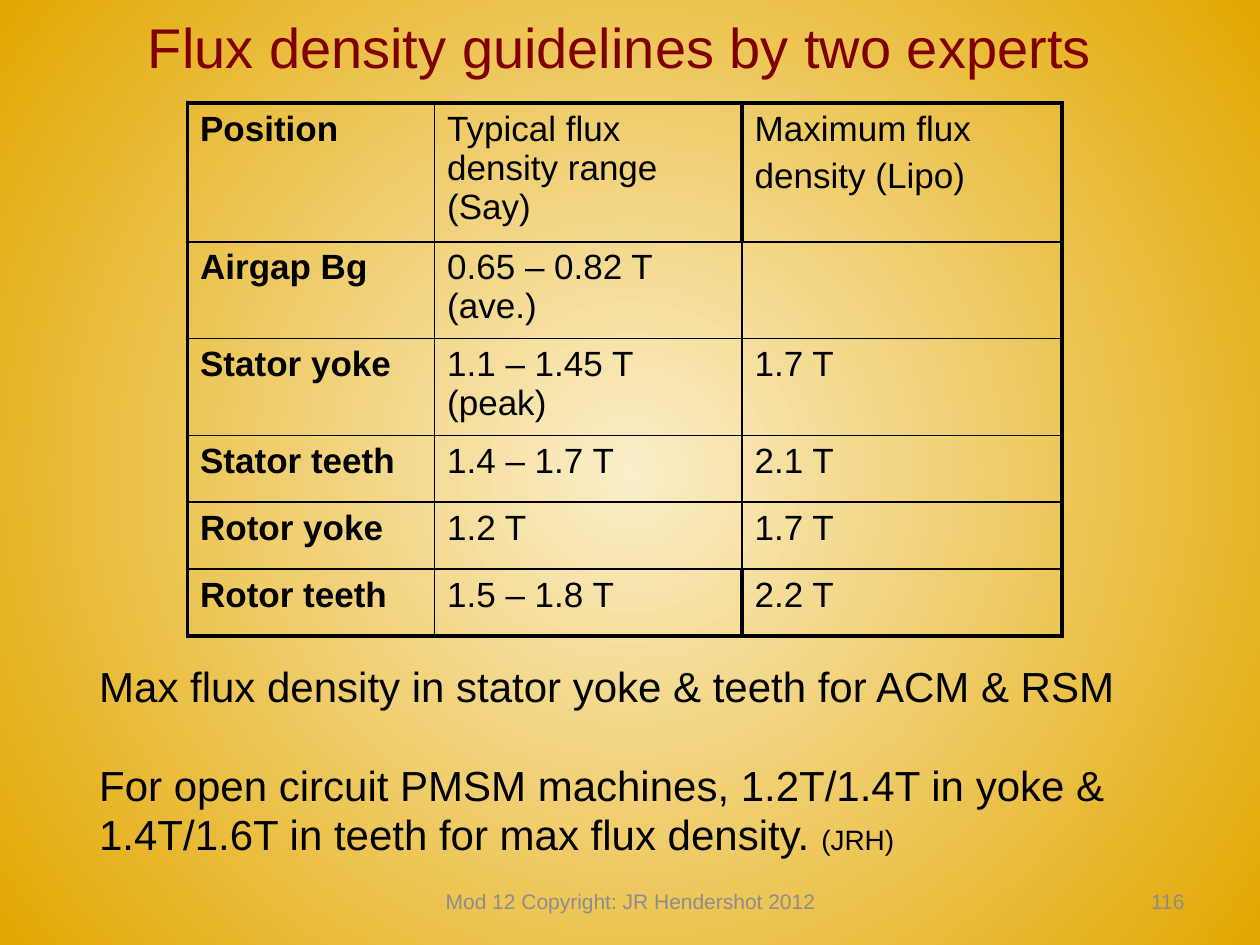
import pptx
import pptx.util
import pptx.oxml
import pptx.oxml.ns
import pptx.dml.color
import pptx.enum.text
from lxml import etree

Cm, Pt = pptx.util.Cm, pptx.util.Pt
ALIGN = pptx.enum.text.PP_ALIGN
ANCHOR = pptx.enum.text.MSO_ANCHOR
qn = pptx.oxml.ns.qn


def style(font, size, color="000000", bold=False):
    font.name, font.size, font.bold = "Arial", Pt(size), bold
    font.color.rgb = pptx.dml.color.RGBColor.from_string(color)


def label(text, left, top, width, height, size, color, align, anchor):
    box = slide.shapes.add_textbox(Cm(left), Cm(top), Cm(width), Cm(height))
    frame = box.text_frame
    frame.word_wrap = True
    frame.vertical_anchor = anchor
    para = frame.paragraphs[0]
    para.text = text
    para.alignment = align
    style(para.font, size, color)
    return frame


deck = pptx.Presentation()
deck.slide_width, deck.slide_height = Cm(25.4), Cm(19.05)
slide = deck.slides.add_slide(deck.slide_layouts[6])

# Background: pale centre, gold edge
fill = slide.background.fill
fill.gradient()
for stop, color, place in zip(fill.gradient_stops, ("FBEEC9", "E2A700"), (0, 1)):
    stop.color.rgb = pptx.dml.color.RGBColor.from_string(color)
    stop.position = place
grad = slide.background._cSld.find(".//" + qn("a:gradFill"))
for line in grad.findall(qn("a:lin")):
    grad.remove(line)
ring = etree.SubElement(grad, qn("a:path"), path="circle")
etree.SubElement(ring, qn("a:fillToRect"), l="50000", t="50000", r="50000", b="50000")

# Footer, page number and title
label("Mod 12 Copyright: JR Hendershot 2012", 8.69, 17.65, 8.05, 1.02,
      12, "8C8C8C", ALIGN.CENTER, ANCHOR.MIDDLE)
label("116", 18.21, 17.65, 5.92, 1.02, 12, "8C8C8C", ALIGN.RIGHT, ANCHOR.MIDDLE)
label("Flux density guidelines by two experts", 1.07, 0.13, 22.86, 1.78,
      32, "800000", ALIGN.CENTER, ANCHOR.TOP)

# Notes below the table
body = label("Max flux density in stator yoke & teeth for ACM & RSM",
             1.75, 12.78, 22.86, 5.28, 24, "000000", ALIGN.LEFT, ANCHOR.MIDDLE)
for text in ("For open circuit PMSM machines, 1.2T/1.4T in yoke &",
             "1.4T/1.6T in teeth for max flux density. "):
    para = body.add_paragraph()
    para.text = text
    style(para.font, 24)
for para, gap in zip(body.paragraphs, (5.5, 33, 5.5)):
    para.line_spacing = 0.8
    para.space_before = Pt(gap)
run = para.add_run()
run.text = "(JRH)"
run.font.size = Pt(16)

# Flux table
rows = [
    ("Position", "Typical flux density range (Say)", "Maximum flux\ndensity (Lipo)"),
    ("Airgap Bg", "0.65 – 0.82 T (ave.)", ""),
    ("Stator yoke", "1.1 – 1.45 T (peak)", "1.7 T"),
    ("Stator teeth", "1.4 – 1.7 T", "2.1 T"),
    ("Rotor yoke", "1.2 T", "1.7 T"),
    ("Rotor teeth", "1.5 – 1.8 T", "2.2 T"),
]
wide = (4.98, 6.2, 6.45)
high = (2.57, 1.78, 1.78, 1.35, 1.35, 1.35)
last = len(rows) - 1
grid = slide.shapes.add_table(len(rows), len(wide), Cm(3.78), Cm(2.08),
                              Cm(sum(wide)), Cm(sum(high))).table
grid.first_row = grid.horz_banding = False
for col, width in zip(grid.columns, wide):
    col.width = Cm(width)
for row, height in zip(grid.rows, high):
    row.height = Cm(height)

for r, row in enumerate(rows):
    for c, text in enumerate(row):
        cell = grid.cell(r, c)
        cell.text = text
        for para in cell.text_frame.paragraphs:
            para.space_before = Pt(4.5)
            style(para.font, 20, bold=c == 0)

        # Thick frame, and a thick divider in the first and last rows
        split = r in (0, last)
        thick = {"L": c == 0 or (c == 2 and split),
                 "R": c == 2 or (c == 1 and split),
                 "T": r == 0, "B": r == last}
        props = cell._tc.get_or_add_tcPr()
        for side, heavy in thick.items():
            edge = etree.SubElement(props, qn("a:ln" + side),
                                    w=str(Pt(2.25 if heavy else 1)))
            ink = etree.SubElement(edge, qn("a:solidFill"))
            etree.SubElement(ink, qn("a:srgbClr"), val="000000")
        cell.fill.background()

deck.save("out.pptx")
